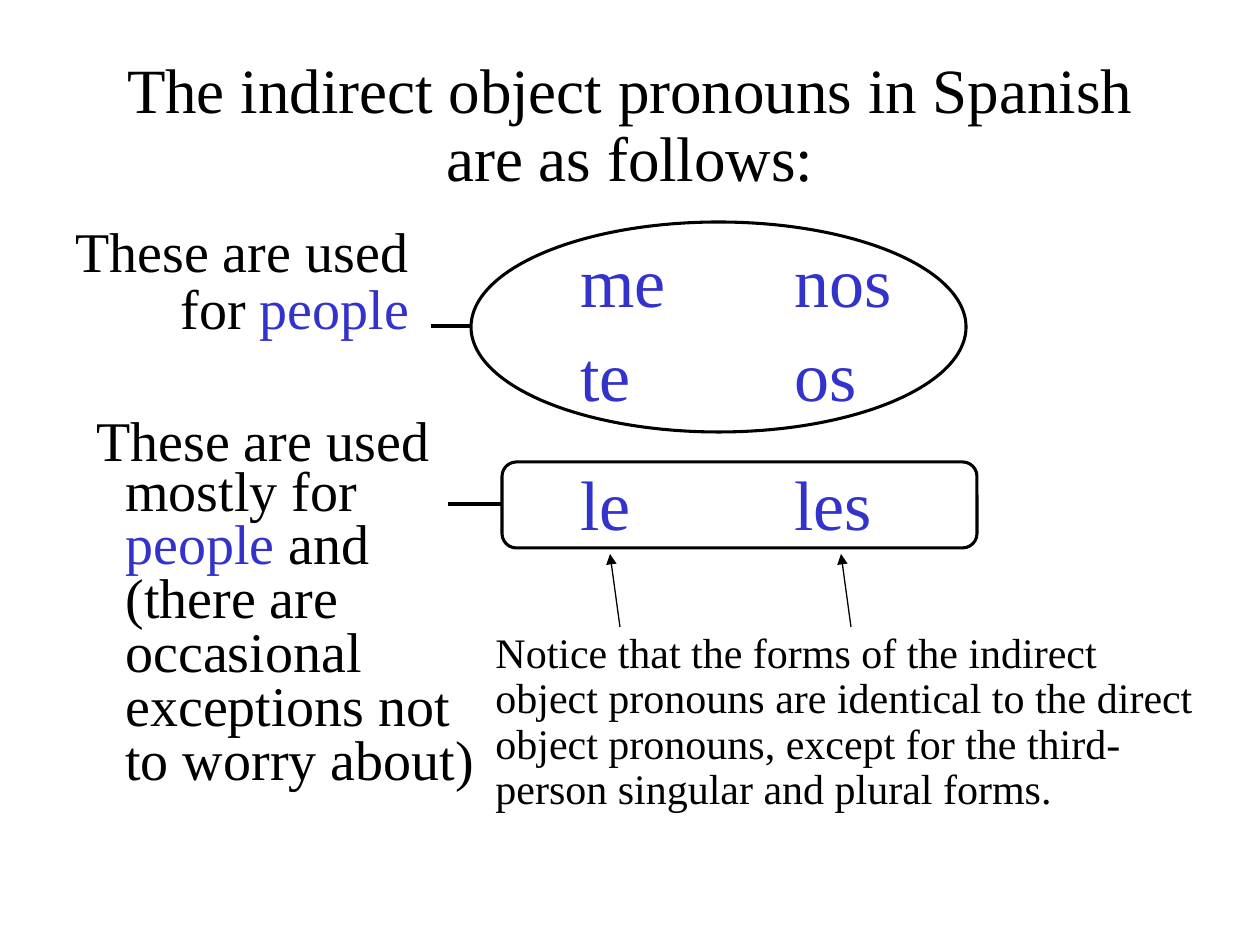
from itertools import product

from lxml.etree import SubElement
from pptx import Presentation
from pptx.dml.color import RGBColor
from pptx.enum.shapes import MSO_CONNECTOR, MSO_SHAPE
from pptx.enum.text import PP_ALIGN
from pptx.oxml.ns import qn
from pptx.util import Emu, Pt

SCALE = 914400 / 126
FONT = "Times New Roman"
COLORS = {"ink": "000000", "accent": "3333CC"}


def px(length):
    """Turn px into EMU."""
    return Emu(round(length * SCALE))


def color(name):
    """Look up a named colour."""
    return RGBColor.from_string(COLORS[name])


def add_text(shapes, box, parts, size, **layout):
    """Add one wrapped paragraph made of (wording, colour) parts."""
    frame = shapes.add_textbox(*map(px, box)).text_frame
    frame.word_wrap = True
    para = frame.paragraphs[0]
    for key, value in layout.items():
        setattr(para, key, value)
    for wording, shade in parts:
        span = para.add_run()
        span.text = wording
        for key, value in {"name": FONT, "size": Pt(size)}.items():
            setattr(span.font, key, value)
        span.font.color.rgb = color(shade)


def add_line(shapes, start, end, width, arrow=False):
    """Add a straight line, with an arrowhead at its end if asked."""
    line = shapes.add_connector(MSO_CONNECTOR.STRAIGHT, *map(px, start + end))
    line.line.color.rgb = color("ink")
    line.line.width = Pt(width)
    if arrow:
        SubElement(line.line._get_or_add_ln(), qn("a:tailEnd"), type="triangle")
    SubElement(line._element.spPr, qn("a:effectLst"))


def add_title(page, box):
    """Place the centred heading."""
    wording = "The indirect object pronouns in Spanish are as follows:"
    add_text(page.shapes, box, [(wording, "ink")], 36,
             alignment=PP_ALIGN.CENTER, line_spacing=0.9)


def add_pronouns(page, box):
    """Place the pronouns in two columns and three rows."""
    left, top, width, height = box
    columns = (("me", "te", "le"), ("nos", "os", "les"))
    row_tops = (0, 94, 223)
    for column, row in product(range(2), range(3)):
        cell = (left + column * 214, top + row_tops[row], width - 214, height - 223)
        add_text(page.shapes, cell, [(columns[column][row], "accent")], 40)


def add_usage(page, box, outline, tail, note, parts, **layout):
    """Place an outline, the line leading to it and its usage note."""
    left, top, width, height = box
    shapes = page.shapes.add_group_shape().shapes
    shape = shapes.add_shape(outline, *map(px, box))
    shape.shadow.inherit = False
    shape.fill.background()
    shape.line.color.rgb = color("ink")
    shape.line.width = Pt(1.75)
    middle = top + height // 2 - 1
    add_line(shapes, (left, middle), (left - tail, middle), 1.75)
    note_left, note_top, note_width, note_height = note
    add_text(shapes, (left + note_left, top + note_top, note_width, note_height),
             parts, 32, **layout)


def add_notice(page, box):
    """Place the closing remark and its arrows up to the third-person forms."""
    left, top, width, height = box
    wording = ("Notice that the forms of the indirect object pronouns are identical "
               "to the direct object pronouns, except for the third-person "
               "singular and plural forms.")
    add_text(page.shapes, box, [(wording, "ink")], 24, line_spacing=0.9)
    for offset in (137, 368):
        start = (left + offset, top + 1)
        end = (left + offset - 10, top - 72)
        add_line(page.shapes, start, end, 0.75, arrow=True)


def add_lead(page, box):
    """Place the opening words of a usage note."""
    add_text(page.shapes, box, [("These are used", "ink")], 32)


def main():
    """Build and save the deck."""
    deck = Presentation()
    deck.slide_width, deck.slide_height = px(1260), px(945)
    page = deck.slides.add_slide(deck.slide_layouts[6])
    add_title(page, (105, 53, 1050, 157))
    add_pronouns(page, (568, 231, 369, 317))
    add_usage(page, (471, 222, 495, 210), MSO_SHAPE.OVAL, 40, (-303, 45, 316, 100),
              [("for ", "ink"), ("people", "accent")])
    add_usage(page, (502, 462, 475, 86), MSO_SHAPE.ROUNDED_RECTANGLE, 54,
              (-389, 0, 388, 315),
              [("mostly for ", "ink"), ("people ", "accent"),
               ("and (there are occasional exceptions not to worry about)", "ink")],
              line_spacing=0.8)
    add_notice(page, (483, 626, 735, 194))
    for left, top in ((63, 210), (84, 399)):
        add_lead(page, (left, top, 388, 79))
    deck.save("out.pptx")


if __name__ == "__main__":
    main()
